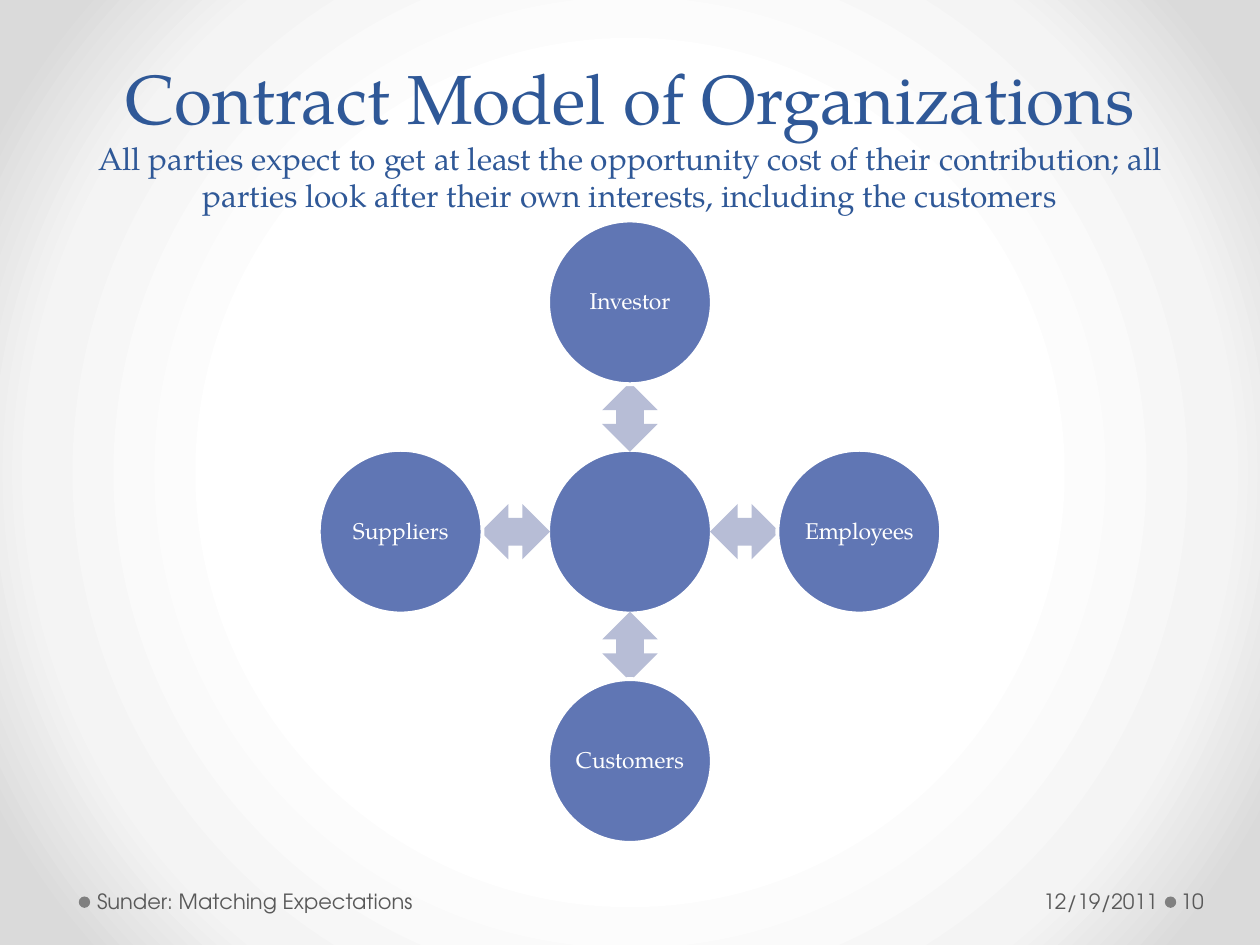
from lxml import etree
from pptx import Presentation
from pptx import util as u
from pptx.dml.color import RGBColor
from pptx.enum import shapes, text
from pptx.oxml.ns import qn

HEX = {"title": "2F5897", "disc": "6076B4", "arrow": "B7BDD6",
       "white": "FFFFFF", "dot": "808080", "foot": "595959"}
SERIF, SANS = "TeX Gyre Pagella", "TeX Gyre Adventor"
HEAD = [("Contract Model of Organizations", 39.6),
        ("All parties expect to get at least the opportunity cost of their "
         "contribution; all parties look after their own interests, "
         "including the customers", 18)]
PARTIES = [("Investor", 0, -1, 270), ("Employees", 1, 0, 0),
           ("Customers", 0, 1, 90), ("Suppliers", -1, 0, 180)]
FOOT = [("12/19/2011", 6.96, 2.28, 0.1, 0.05, text.PP_ALIGN.RIGHT),
        ("Sunder: Matching Expectations", 0.72, 3.11, 0.05, 0.1, text.PP_ALIGN.LEFT),
        ("10", 9.34, 0.61, 0.03, 0.05, text.PP_ALIGN.LEFT)]
STOPS = [(0, "FFFFFF"), (50, "FFFFFF"), (76, "F4F4F4"), (92, "DADADA"), (100, "DADADA")]
WIDE, HIGH = 10, 7.5
MID_X, MID_Y = WIDE / 2, 4.22
DISC, STEP = 1.3, 1.82
ARROW_W, ARROW_H = 0.55, 0.44


def rgb(name):
    return RGBColor.from_string(HEX[name])


def style(font, face, size, color):
    font.name, font.size = face, u.Pt(size)
    font.color.rgb = rgb(color)


def pad(frame, left, top, right, bottom):
    frame.margin_left, frame.margin_top = u.Inches(left), u.Inches(top)
    frame.margin_right, frame.margin_bottom = u.Inches(right), u.Inches(bottom)


def place(kind, x, y, w, h, color):
    item = slide.shapes.add_shape(kind, *map(u.Inches, (x - w / 2, y - h / 2, w, h)))
    item.shadow.inherit = False
    item.fill.solid()
    item.fill.fore_color.rgb = rgb(color)
    item.line.fill.background()
    return item


def disc(x, y, label=""):
    item = place(shapes.MSO_SHAPE.OVAL, x, y, DISC, DISC, "disc")
    item.line.color.rgb = rgb("white")
    item.line.width = u.Pt(2.25)
    if label:
        frame = item.text_frame
        frame.word_wrap = False
        frame.vertical_anchor = text.MSO_ANCHOR.MIDDLE
        pad(frame, 0.02, 0.02, 0.02, 0.02)
        par = frame.paragraphs[0]
        par.text = label
        par.alignment = text.PP_ALIGN.CENTER
        par.line_spacing = 0.9
        style(par.font, SERIF, 13, "white")


def backdrop():
    fill = slide.background.fill
    fill.gradient()
    grad = slide.element.find(".//" + qn("a:gradFill"))
    for child in list(grad):
        grad.remove(child)
    stops = etree.SubElement(grad, qn("a:gsLst"))
    for pos, color in STOPS:
        stop = etree.SubElement(stops, qn("a:gs"), pos=str(pos * 1000))
        etree.SubElement(stop, qn("a:srgbClr"), val=color)
    route = etree.SubElement(grad, qn("a:path"), path="circle")
    etree.SubElement(route, qn("a:fillToRect"), dict.fromkeys("ltrb", "50000"))


deck = Presentation()
deck.slide_width, deck.slide_height = u.Inches(WIDE), u.Inches(HIGH)
slide = deck.slides.add_slide(deck.slide_layouts[5])
backdrop()

for x in (9.29, 0.67):
    place(shapes.MSO_SHAPE.OVAL, x, 7.16, 0.09, 0.09, "dot")

title = slide.shapes.title
title.left, title.top, title.width, title.height = map(u.Inches, (0.5, 0, 9, 1.75))
title.text_frame.vertical_anchor = text.MSO_ANCHOR.BOTTOM
title.text_frame.auto_size = text.MSO_AUTO_SIZE.NONE
par = title.text_frame.paragraphs[0]
par.alignment = text.PP_ALIGN.CENTER
for i, (words, size) in enumerate(HEAD):
    if i:
        par.add_line_break()
    run = par.add_run()
    run.text = words
    style(run.font, SERIF, size, "title")

disc(MID_X, MID_Y)
for label, dx, dy, turn in PARTIES:
    arrow = place(shapes.MSO_SHAPE.LEFT_RIGHT_ARROW, MID_X + dx * STEP / 2,
                  MID_Y + dy * STEP / 2, ARROW_W, ARROW_H, "arrow")
    arrow.rotation = turn
    disc(MID_X + dx * STEP, MID_Y + dy * STEP, label)

for words, x, w, left, right, align in FOOT:
    frame = slide.shapes.add_textbox(*map(u.Inches, (x, 6.95, w, 0.4))).text_frame
    frame.word_wrap = True
    frame.vertical_anchor = text.MSO_ANCHOR.MIDDLE
    pad(frame, left, 0.05, right, 0.05)
    par = frame.paragraphs[0]
    par.text = words
    par.alignment = align
    style(par.font, SANS, 12, "foot")

deck.save("out.pptx")
